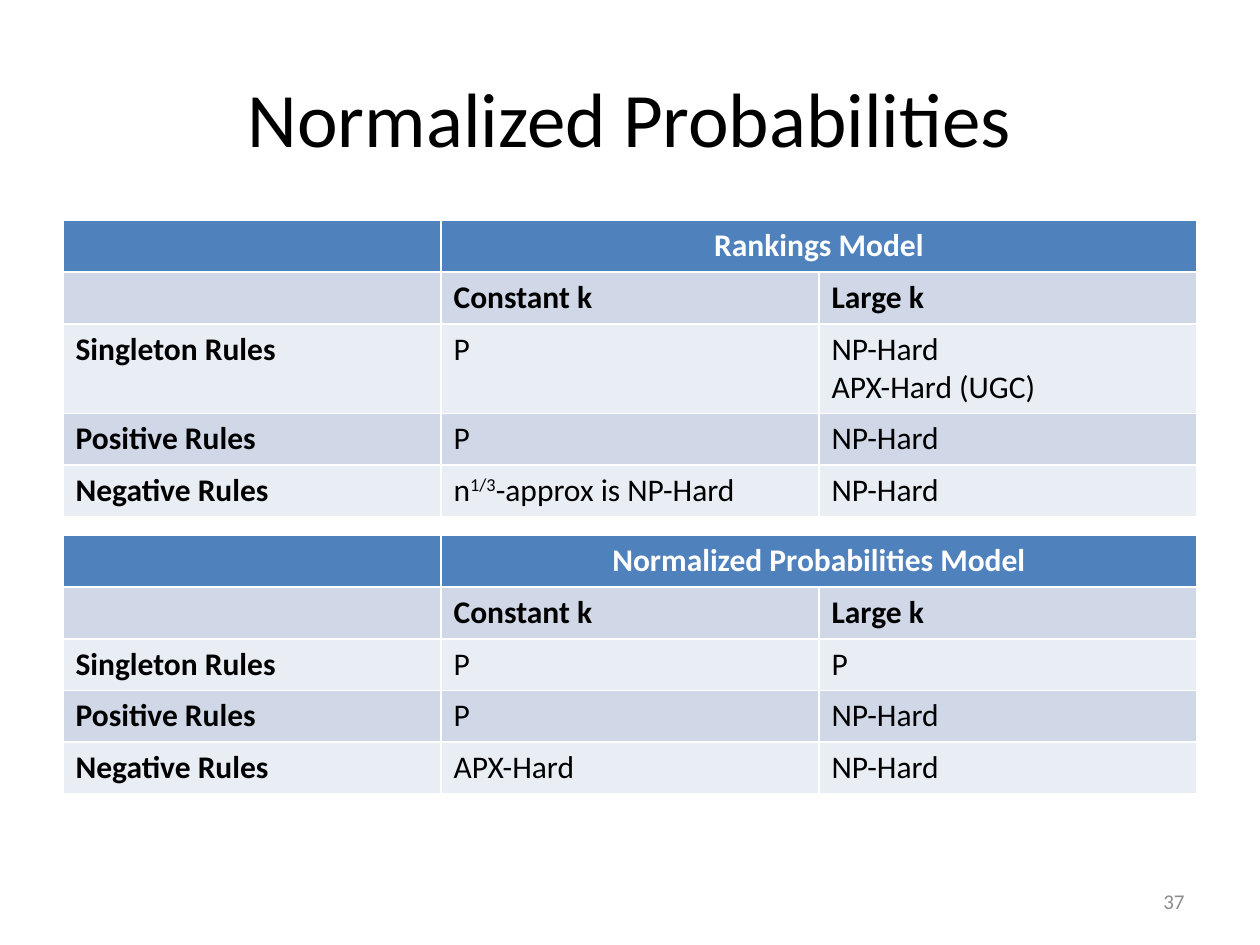
from pptx import Presentation
from pptx.dml.color import RGBColor
from pptx.enum import text
from pptx.util import Inches, Pt

FONT = "Calibri"
BLACK = RGBColor(0x00, 0x00, 0x00)
WHITE = RGBColor(0xFF, 0xFF, 0xFF)
GRAY = RGBColor(0x8C, 0x8C, 0x8C)
HEADER = RGBColor(0x4F, 0x81, 0xBD)
BANDS = [RGBColor(0xE9, 0xED, 0xF4), RGBColor(0xD0, 0xD8, 0xE8)]
ROW_HEIGHT = Inches(0.41)

# Text between two ^ marks is superscript.
TABLES = [
    (1.75, "Rankings Model", [
        ("P", "NP-Hard\nAPX-Hard (UGC)"),
        ("P", "NP-Hard"),
        ("n^1/3^-approx is NP-Hard", "NP-Hard"),
    ]),
    (4.25, "Normalized Probabilities Model", [
        ("P", "P"),
        ("P", "NP-Hard"),
        ("APX-Hard", "NP-Hard"),
    ]),
]
RULES = ["Singleton Rules", "Positive Rules", "Negative Rules"]


def add_runs(p, line, size, color, bold=False):
    for i, part in enumerate(line.split("^")):
        r = p.add_run()
        r.text = part
        r.font.name = FONT
        r.font.size = Pt(size)
        r.font.bold = bold
        r.font.color.rgb = color
        if i % 2:
            r._r.get_or_add_rPr().set("baseline", "30000")


prs = Presentation()
prs.slide_width, prs.slide_height = Inches(10), Inches(7.5)
s = prs.slides.add_slide(prs.slide_layouts[5])

title = s.shapes.title
title.left, title.top = Inches(0.5), Inches(0.3)
title.width, title.height = Inches(9), Inches(1.25)
title.text_frame.vertical_anchor = text.MSO_ANCHOR.MIDDLE
p = title.text_frame.paragraphs[0]
p.alignment = text.PP_ALIGN.CENTER
add_runs(p, "Normalized Probabilities", 44, BLACK)

for top, model, results in TABLES:
    rows = [("", model, ""), ("", "Constant k", "Large k")]
    rows += [(rule, *result) for rule, result in zip(RULES, results)]
    # The default table style supplies the white rules between cells.
    table = s.shapes.add_table(len(rows), 3, Inches(0.5), Inches(top),
                               Inches(9), ROW_HEIGHT * len(rows)).table
    table.cell(0, 1).merge(table.cell(0, 2))
    for i, row in enumerate(rows):
        for j, value in enumerate(row):
            cell = table.cell(i, j)
            cell.fill.solid()
            cell.fill.fore_color.rgb = BANDS[i % 2] if i else HEADER
            if not value:
                continue
            tf = cell.text_frame
            for k, line in enumerate(value.split("\n")):
                p = tf.add_paragraph() if k else tf.paragraphs[0]
                if i == 0:
                    p.alignment = text.PP_ALIGN.CENTER
                add_runs(p, line, 18, BLACK if i else WHITE,
                         bold=i < 2 or j == 0)

number = s.shapes.add_textbox(Inches(7.17), Inches(6.95),
                              Inches(2.33), Inches(0.4))
tf = number.text_frame
tf.word_wrap = True
tf.vertical_anchor = text.MSO_ANCHOR.MIDDLE
p = tf.paragraphs[0]
p.alignment = text.PP_ALIGN.RIGHT
add_runs(p, "37", 12, GRAY)

prs.save("out.pptx")
